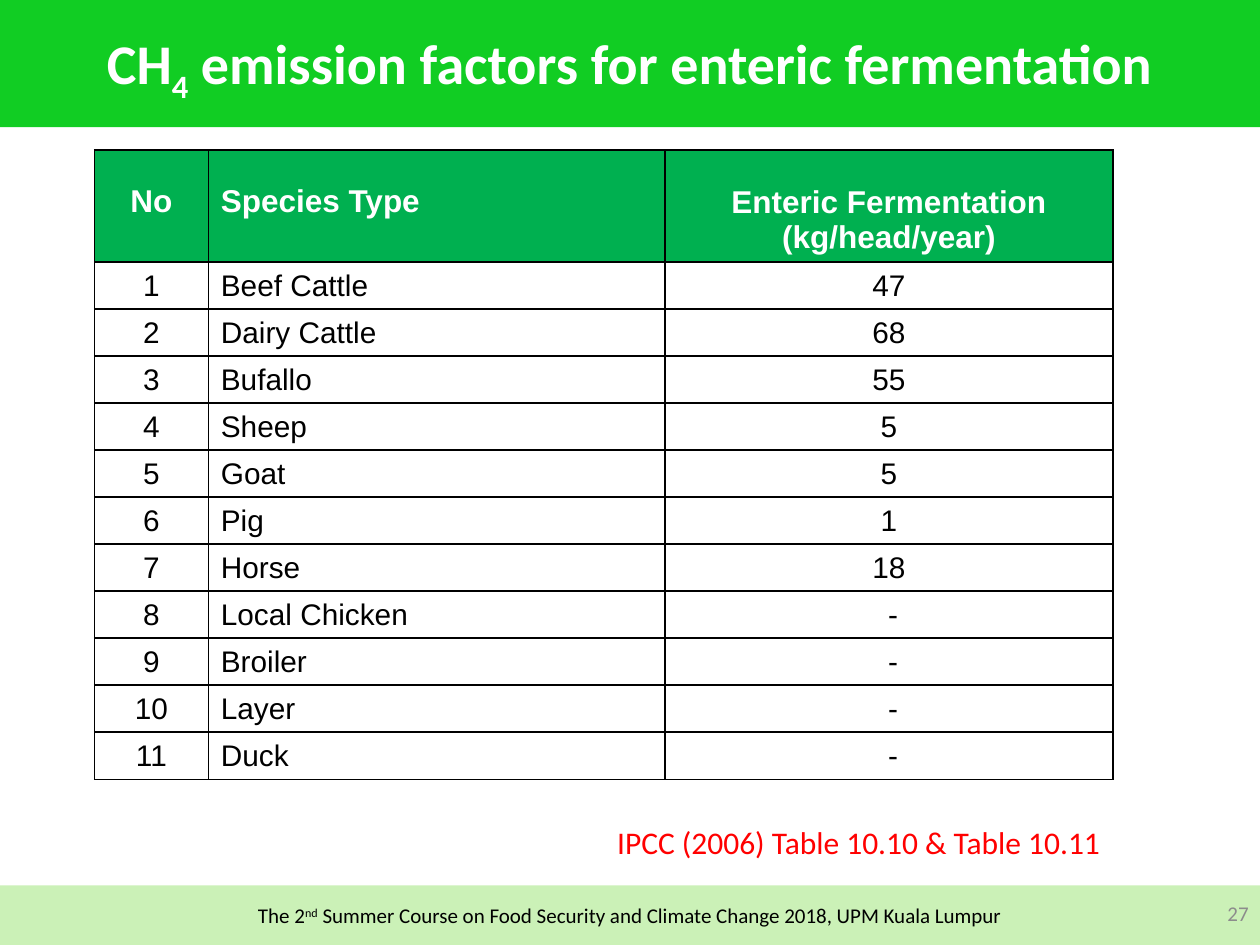
from lxml.etree import SubElement
from pptx import Presentation
from pptx.dml.color import RGBColor
from pptx.enum.shapes import MSO_SHAPE
from pptx.enum.text import MSO_ANCHOR, PP_ALIGN
from pptx.oxml.ns import qn
from pptx.util import Pt

WHITE = RGBColor(0xFF, 0xFF, 0xFF)
BLACK = RGBColor(0, 0, 0)
RED = RGBColor(0xFF, 0, 0)
GRAY = RGBColor(0x8C, 0x8C, 0x8C)
BRIGHT_GREEN = RGBColor(0x11, 0xCD, 0x23)
PALE_GREEN = RGBColor(0xCB, 0xF1, 0xB7)
HEADER_GREEN = RGBColor(0x00, 0xB0, 0x50)

TITLE = [("CH", 0), ("4", -25), (" emission factors for enteric fermentation", 0)]
FOOTER = [("The 2", 0), ("nd", 30),
          (" Summer Course on Food Security and Climate Change 2018, UPM Kuala Lumpur", 0)]
SOURCE = "IPCC (2006) Table 10.10 & Table 10.11"
PAGE_NUMBER = "27"
HEADINGS = ["No", "Species Type", "Enteric Fermentation\n(kg/head/year)"]
SPECIES = [
    ("Beef Cattle", "47"),
    ("Dairy Cattle", "68"),
    ("Bufallo", "55"),
    ("Sheep", "5"),
    ("Goat", "5"),
    ("Pig", "1"),
    ("Horse", "18"),
    ("Local Chicken", " -"),
    ("Broiler", " -"),
    ("Layer", " -"),
    ("Duck", " -"),
]
COLUMN_WIDTHS = [65, 261, 256]
COLUMN_ALIGNS = [PP_ALIGN.CENTER, PP_ALIGN.LEFT, PP_ALIGN.CENTER]
HEADER_HEIGHT, ROW_HEIGHT = 63.9, 26.9
LINE_HEIGHT = 20.7


def write(frame, text, size, color, font="Calibri", bold=False,
          align=PP_ALIGN.CENTER, spacing=None):
    lines = [[(line, 0)] for line in text.split("\n")] if isinstance(text, str) else [text]
    for index, pieces in enumerate(lines):
        paragraph = frame.add_paragraph() if index else frame.paragraphs[0]
        paragraph.alignment = align
        if spacing:
            paragraph.line_spacing = spacing
        for piece, baseline in pieces:
            run = paragraph.add_run()
            run.text = piece
            run.font.name = font
            run.font.size = Pt(size)
            run.font.bold = bold
            run.font.color.rgb = color
            if baseline:
                run.font._element.set("baseline", str(baseline * 1000))


def add_band(slide, left, top, width, height, fill):
    band = slide.shapes.add_shape(MSO_SHAPE.RECTANGLE, Pt(left), Pt(top), Pt(width), Pt(height))
    band.shadow.inherit = False
    band.fill.solid()
    band.fill.fore_color.rgb = fill
    band.line.fill.background()
    band.text_frame.word_wrap = True
    band.text_frame.vertical_anchor = MSO_ANCHOR.MIDDLE
    return band.text_frame


def add_label(slide, left, top, width, height, anchor=MSO_ANCHOR.TOP):
    frame = slide.shapes.add_textbox(Pt(left), Pt(top), Pt(width), Pt(height)).text_frame
    frame.word_wrap = True
    frame.vertical_anchor = anchor
    return frame


def style_cell(cell, fill):
    properties = cell._tc.get_or_add_tcPr()
    for side in ("a:lnL", "a:lnR", "a:lnT", "a:lnB"):
        border = SubElement(properties, qn(side), w=str(Pt(1)))
        SubElement(SubElement(border, qn("a:solidFill")), qn("a:srgbClr"), val=str(BLACK))
    cell.fill.solid()
    cell.fill.fore_color.rgb = fill
    cell.vertical_anchor = MSO_ANCHOR.BOTTOM


def add_species_table(slide):
    rows = [HEADINGS] + [(str(number), *entry) for number, entry in enumerate(SPECIES, 1)]
    height = HEADER_HEIGHT + ROW_HEIGHT * len(SPECIES)
    table = slide.shapes.add_table(len(rows), len(HEADINGS), Pt(54), Pt(85.8),
                                   Pt(sum(COLUMN_WIDTHS)), Pt(height)).table
    for column, width in zip(table.columns, COLUMN_WIDTHS):
        column.width = Pt(width)
    for r, row in enumerate(rows):
        header = r == 0
        table.rows[r].height = Pt(HEADER_HEIGHT if header else ROW_HEIGHT)
        for c, text in enumerate(row):
            cell = table.cell(r, c)
            style_cell(cell, HEADER_GREEN if header else WHITE)
            if header and "\n" not in text:
                cell.margin_bottom = Pt(3.6 + LINE_HEIGHT)
            write(cell.text_frame, text, 18 if header else 17, WHITE if header else BLACK,
                  font="Arial", bold=header, align=COLUMN_ALIGNS[c])


def main():
    deck = Presentation()
    deck.slide_width, deck.slide_height = Pt(720), Pt(540)
    slide = deck.slides.add_slide(deck.slide_layouts[6])

    write(add_band(slide, -0.5, 506, 721, 36, PALE_GREEN), FOOTER, 12, BLACK, spacing=0.9)
    write(add_band(slide, 0, 0, 720, 72.7, BRIGHT_GREEN), TITLE, 32, WHITE, bold=True, spacing=0.9)
    add_species_table(slide)
    write(add_label(slide, 156, 466.6, 480, 29), SOURCE, 18, RED, align=PP_ALIGN.RIGHT)
    write(add_label(slide, 558.6, 507, 162, 29, anchor=MSO_ANCHOR.MIDDLE),
          PAGE_NUMBER, 12, GRAY, align=PP_ALIGN.RIGHT)

    deck.save("out.pptx")


if __name__ == "__main__":
    main()
